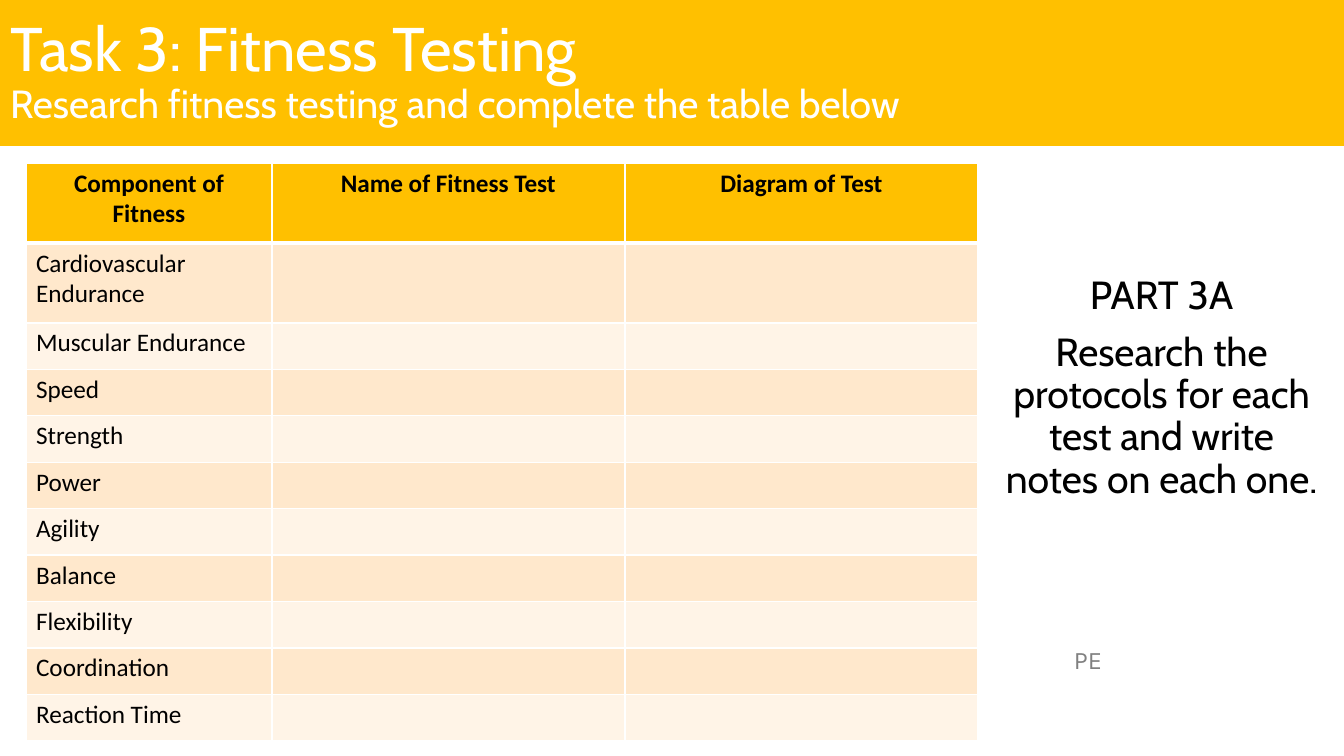
"""Builds the fitness testing task slide with its table and research note."""
from lxml import etree
from pptx import Presentation
from pptx.dml.color import RGBColor
from pptx.enum.text import MSO_ANCHOR, MSO_AUTO_SIZE, PP_ALIGN
from pptx.oxml.ns import qn
from pptx.util import Pt

LEFT, CENTER = PP_ALIGN.LEFT, PP_ALIGN.CENTER
MIDDLE, TOP = MSO_ANCHOR.MIDDLE, MSO_ANCHOR.TOP
NO_FIT = MSO_AUTO_SIZE.NONE
PX = 12192000 / 1344
GOLD, WHITE, BLACK, GREY = "FFC000", "FFFFFF", "000000", "808080"
BANDS = ["FFE8CC", "FFF4E7"]


def color(value):
    return RGBColor.from_string(value)


def add_run(p, text, size, name, rgb, bold=False):
    r = p.add_run()
    r.text = text
    for key, value in {"size": Pt(size), "name": name, "bold": bold}.items():
        setattr(r.font, key, value)
    r.font.color.rgb = color(rgb)


prs = Presentation()
prs.slide_width, prs.slide_height = round(1344 * PX), round(756 * PX)
s = prs.slides.add_slide(prs.slide_layouts[5])

title = s.shapes.title
box = {"left": 0, "top": 0, "width": 1344, "height": 146}
for key, value in box.items():
    setattr(title, key, round(value * PX))
title.fill.solid()
title.fill.fore_color.rgb = color(GOLD)
tf = title.text_frame
for key, value in {"auto_size": NO_FIT, "vertical_anchor": MIDDLE, "word_wrap": True}.items():
    setattr(tf, key, value)
p = tf.paragraphs[0]
p.alignment, p.line_spacing = LEFT, 0.9
add_run(p, "Task 3: Fitness Testing", 44, "Cabin", WHITE)
p.add_line_break()
add_run(p, "Research fitness testing and complete the table below", 28, "Cabin", WHITE)

headings = ["Component of Fitness", "Name of Fitness Test", "Diagram of Test"]
components = ["Cardiovascular Endurance", "Muscular Endurance", "Speed", "Strength", "Power",
              "Agility", "Balance", "Flexibility", "Coordination", "Reaction Time"]
rows = [headings] + [[name, "", ""] for name in components]
widths = [246, 353, 353]
table_height, tall = 578, 80
short = (table_height - 2 * tall) / (len(rows) - 2)
table = s.shapes.add_table(len(rows), len(widths), *[
    round(v * PX) for v in (26, 163, sum(widths), table_height)]).table
for column, width in zip(table.columns, widths):
    column.width = round(width * PX)
for i, texts in enumerate(rows):
    header = i == 0
    table.rows[i].height = round((tall if i < 2 else short) * PX)
    for j, text in enumerate(texts):
        cell = table.cell(i, j)
        p = cell.text_frame.paragraphs[0]
        p.alignment = CENTER if header else LEFT
        p.font.size = Pt(18)
        if text:
            add_run(p, text, 18, "Calibri", BLACK, header)
        tcPr = cell._tc.get_or_add_tcPr()
        edges = {"lnL": 1, "lnR": 1, "lnT": 3 if i == 1 else 1, "lnB": 3 if header else 1}
        for tag, points in edges.items():
            ln = etree.SubElement(tcPr, qn("a:" + tag), w=str(Pt(points)))
            fill = etree.SubElement(ln, qn("a:solidFill"))
            etree.SubElement(fill, qn("a:srgbClr"), val=WHITE)
        cell.fill.solid()
        cell.fill.fore_color.rgb = color(GOLD if header else BANDS[(i - 1) % 2])

notes = [
    ((991, 271, 341, 281), ["PART 3A", "Research the protocols for each test and write notes on each one."],
     {"size": 28, "name": "Cabin", "rgb": BLACK}, {"alignment": CENTER, "line_spacing": 0.9}),
    ((1064, 639, 229, 40), ["PE"],
     {"size": 18, "name": "Karla", "rgb": GREY}, {"alignment": LEFT}),
]
for place, lines, font, layout in notes:
    tf = s.shapes.add_textbox(*[round(v * PX) for v in place]).text_frame
    tf.word_wrap, tf.vertical_anchor = True, TOP
    for i, line in enumerate(lines):
        p = tf.add_paragraph() if i else tf.paragraphs[0]
        p.space_before = Pt(10 if i else 0)
        for key, value in layout.items():
            setattr(p, key, value)
        add_run(p, line, **font)

prs.save("out.pptx")
